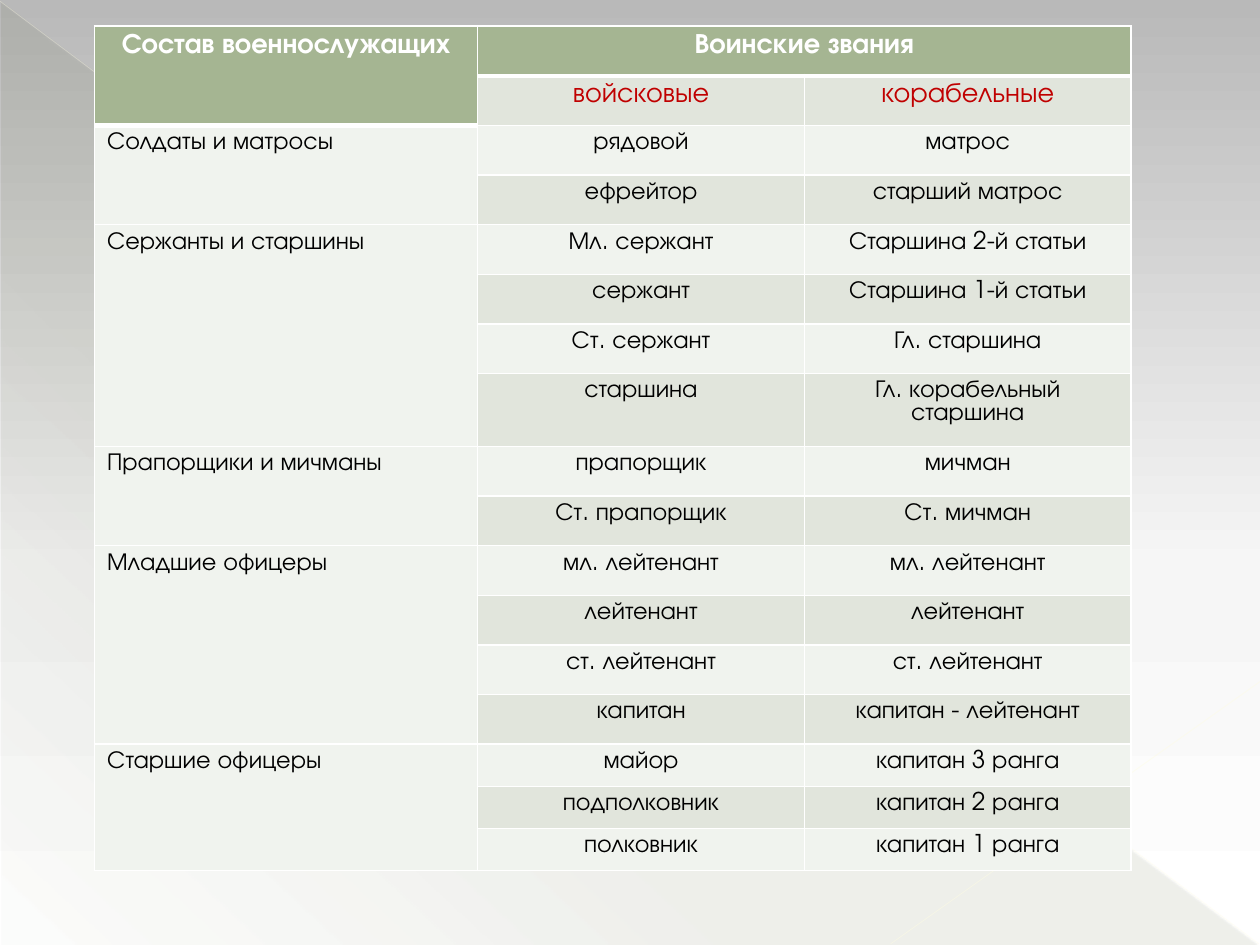
from dataclasses import dataclass

from lxml.etree import SubElement
from pptx import Presentation
from pptx.dml.color import RGBColor
from pptx.enum.shapes import MSO_CONNECTOR, MSO_SHAPE
from pptx.enum.text import PP_ALIGN
from pptx.oxml.ns import qn
from pptx.util import Pt

LEFT, MID = PP_ALIGN.LEFT, PP_ALIGN.CENTER
LINE, WEDGE = MSO_CONNECTOR.STRAIGHT, MSO_SHAPE.RIGHT_TRIANGLE


@dataclass(frozen=True)
class Theme:
    """Colours, font and type sizes of the slide."""
    font: str = "TeX Gyre Adventor"
    head: int = 16
    body: int = 14
    ink: str = "000000"
    white: str = "FFFFFF"
    red: str = "C00000"
    green: str = "A5B592"
    dark: str = "E1E5DC"
    pale: str = "F0F3EE"
    olive: str = "444D26"
    cream: str = "FFFDE3"
    sky: tuple = (("B9B9B9", 0, 100), ("F6F6F6", 60, 100), ("FFFFFF", 100, 100))


THEME = Theme()
HEADS = ("Состав военнослужащих", "Воинские звания")
KINDS = ("войсковые", "корабельные")
GROUPS = (
    ("Солдаты и матросы", (
        ("рядовой", "матрос"),
        ("ефрейтор", "старший матрос"))),
    ("Сержанты и старшины", (
        ("Мл. сержант", "Старшина 2-й статьи"),
        ("сержант", "Старшина 1-й статьи"),
        ("Ст. сержант", "Гл. старшина"),
        ("старшина", "Гл. корабельный старшина"))),
    ("Прапорщики и мичманы", (
        ("прапорщик", "мичман"),
        ("Ст. прапорщик", "Ст. мичман"))),
    ("Младшие офицеры", (
        ("мл. лейтенант", "мл. лейтенант"),
        ("лейтенант", "лейтенант"),
        ("ст. лейтенант", "ст. лейтенант"),
        ("капитан", "капитан - лейтенант"))),
    ("Старшие офицеры", (
        ("майор", "капитан 3 ранга"),
        ("подполковник", "капитан 2 ранга"),
        ("полковник", "капитан 1 ранга"))),
)
COLS = (219, 186.7, 186.7)
ROWS = (28.35,) * 7 + (41.7,) + (28.35,) * 6 + (24.1,) * 3


def add_tint(node, hue, alpha=100):
    """Append a colour with its opacity in percent."""
    tint = SubElement(node, qn("a:srgbClr"), val=hue)
    if alpha < 100:
        SubElement(tint, qn("a:alpha"), val=str(alpha * 1000))


def set_grad(fill, root, stops, angle):
    """Fill with a linear gradient of (colour, place, opacity) stops."""
    fill.gradient()
    fill.gradient_angle = 360 - angle
    ramp = next(root.iter(qn("a:gsLst")))
    for old in list(ramp):
        ramp.remove(old)
    for hue, place, alpha in stops:
        add_tint(SubElement(ramp, qn("a:gs"), pos=str(place * 1000)), hue, alpha)


def put_text(cell, text, size=THEME.body, hue=THEME.ink, bold=False, align=MID):
    """Write text with its format into a cell."""
    para = cell.text_frame.paragraphs[0]
    para.alignment = align
    run = para.add_run()
    run.text = text
    font = run.font
    font.name, font.size, font.bold = THEME.font, Pt(size), bold
    font.color.rgb = RGBColor.from_string(hue)


def set_cell(cell, hue, top, base):
    """Give a cell its fill and white borders."""
    cell.margin_left = cell.margin_right = Pt(7.2)
    cell.margin_top = cell.margin_bottom = Pt(3.6)
    props = cell._tc.get_or_add_tcPr()
    for side, width in (("L", 1), ("R", 1), ("T", top), ("B", base)):
        edge = SubElement(props, qn("a:ln" + side), w=str(Pt(width)))
        add_tint(SubElement(edge, qn("a:solidFill")), THEME.white)
    cell.fill.solid()
    cell.fill.fore_color.rgb = RGBColor.from_string(hue)


def add_ray(slide, start, end, width, alpha):
    """Draw one thin translucent line."""
    ray = slide.shapes.add_connector(LINE, *map(Pt, start + end))
    ray.line.width = Pt(width)
    ray.line.color.rgb = RGBColor.from_string(THEME.cream)
    tint = next(ray.element.spPr.iter(qn("a:srgbClr")))
    SubElement(tint, qn("a:alpha"), val=str(alpha * 1000))
    SubElement(ray.element.spPr, qn("a:effectLst"))


def add_back(slide, left, top, width, height):
    """Draw the gradient backdrop, its wedge and its two rays."""
    set_grad(slide.background.fill, slide.element, THEME.sky, 90)
    wedge = slide.shapes.add_shape(
        WEDGE, *map(Pt, (left + 0.7, top + 1.4, width - 1.4, height - 1.4)))
    wedge.shadow.inherit = False
    wedge.line.fill.background()
    stops = [(THEME.olive, place, alpha) for place, alpha in ((0, 10), (70, 8), (100, 1))]
    set_grad(wedge.fill, wedge.element, stops, 133)
    right, base = left + width, top + height - 0.7
    add_ray(slide, (left, top + 0.7), (right - 0.7, base), 0.39, 35)
    add_ray(slide, (right, top + 389.5), (right - 211, base), 0.47, 45)


def add_ranks(slide, left, top, width, height):
    """Build the table of ranks in its box."""
    box = map(Pt, (left, top, width, height))
    grid = slide.shapes.add_table(len(ROWS), len(COLS), *box).table
    for col, size in zip(grid.columns, COLS):
        col.width = Pt(size)
    for row, size in zip(grid.rows, ROWS):
        row.height = Pt(size)
    for r in range(len(ROWS)):
        for c in range(len(COLS)):
            deep = 2 if c == 0 else 1
            band = THEME.dark if r % 2 and c else THEME.pale
            set_cell(grid.cell(r, c), THEME.green if r < deep else band,
                     3 if r == deep else 1, 3 if r < deep else 1)
    grid.cell(0, 0).merge(grid.cell(1, 0))
    grid.cell(0, 1).merge(grid.cell(0, 2))
    for c, text in enumerate(HEADS):
        put_text(grid.cell(0, c), text, size=THEME.head, hue=THEME.white, bold=True)
    for c, text in enumerate(KINDS, 1):
        put_text(grid.cell(1, c), text, size=THEME.head, hue=THEME.red)
    first = 2
    for name, ranks in GROUPS:
        grid.cell(first, 0).merge(grid.cell(first + len(ranks) - 1, 0))
        put_text(grid.cell(first, 0), name, align=LEFT)
        for r, pair in enumerate(ranks, first):
            for c, text in enumerate(pair, 1):
                put_text(grid.cell(r, c), text)
        first += len(ranks)


def main():
    """Build the slide and save it."""
    deck = Presentation()
    deck.slide_width, deck.slide_height = Pt(720), Pt(540)
    slide = deck.slides.add_slide(deck.slide_layouts[6])
    add_back(slide, 0, 0, 720, 540)
    add_ranks(slide, 54, 15, sum(COLS), sum(ROWS))
    deck.save("out.pptx")


if __name__ == "__main__":
    main()
